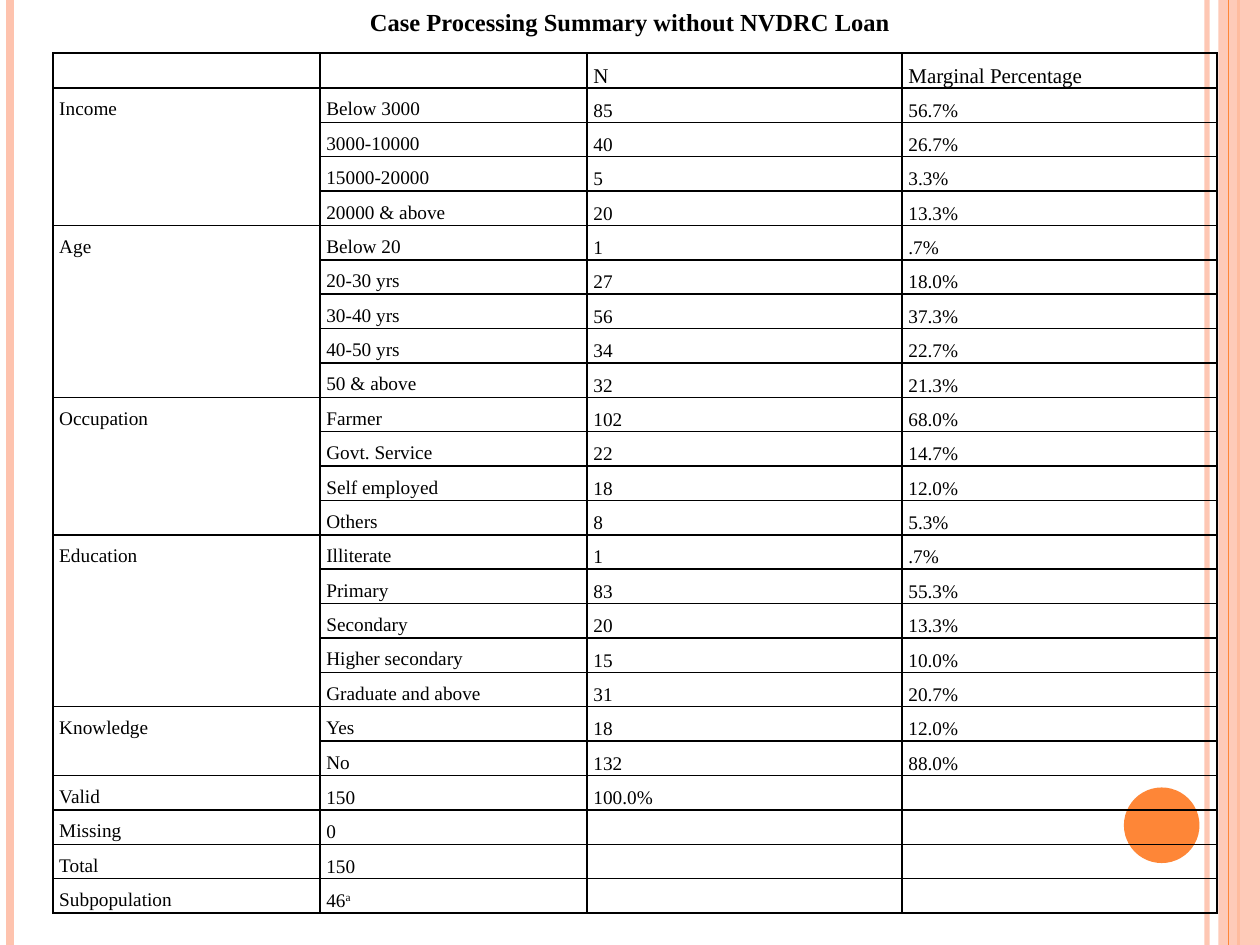
from lxml.etree import SubElement
from pptx import Presentation
from pptx.dml.color import RGBColor
from pptx.enum.shapes import MSO_CONNECTOR, MSO_SHAPE
from pptx.enum.text import MSO_ANCHOR, PP_ALIGN
from pptx.oxml.ns import qn
from pptx.util import Inches, Pt

COLORS = {"peach": "FEC3AE", "orange": "FE8637", "black": "000000"}
FONT = "Times New Roman"


def add_alpha(shape, percent):
    for color in shape._element.spPr.iter(qn("a:srgbClr")):
        SubElement(color, qn("a:alpha"), val=str(percent * 1000))


def add_span(para, text, size, bold=False):
    span = para.add_run()
    span.text = text
    span.font.name = FONT
    span.font.size = Pt(size)
    span.font.bold = bold
    span.font.color.rgb = RGBColor.from_string(COLORS["black"])
    return span


deck = Presentation()
deck.slide_width = Inches(10)
deck.slide_height = Inches(7.5)
page = deck.slides.add_slide(deck.slide_layouts[5])

stripes = [
    (9.58, "peach", 3, 93),
    (0.08, "peach", 4.5, 100),
    (9.83, "orange", 1.5, 100),
    (9.75, "orange", 0.75, 100),
]
for x, color, width, opacity in stripes:
    stripe = page.shapes.add_connector(
        MSO_CONNECTOR.STRAIGHT, Inches(x), Inches(0), Inches(x), Inches(7.5))
    stripe.line.color.rgb = RGBColor.from_string(COLORS[color])
    stripe.line.width = Pt(width)
    SubElement(stripe._element.spPr, qn("a:effectLst"))
    if opacity < 100:
        add_alpha(stripe, opacity)
    if x == 9.83:
        band = page.shapes.add_shape(
            MSO_SHAPE.RECTANGLE, Inches(9.67), Inches(0), Inches(0.33), Inches(7.5))

disc = page.shapes.add_shape(
    MSO_SHAPE.OVAL, Inches(8.92), Inches(6.25), Inches(0.6), Inches(0.6))
for shape, color in ((band, "peach"), (disc, "orange")):
    shape.shadow.inherit = False
    shape.fill.solid()
    shape.fill.fore_color.rgb = RGBColor.from_string(COLORS[color])
    shape.line.fill.background()
add_alpha(band, 87)

groups = [
    ("Income", [("Below 3000", "85", "56.7%"), ("3000-10000", "40", "26.7%"),
                ("15000-20000", "5", "3.3%"), ("20000 & above", "20", "13.3%")]),
    ("Age", [("Below 20", "1", ".7%"), ("20-30 yrs", "27", "18.0%"),
             ("30-40 yrs", "56", "37.3%"), ("40-50 yrs", "34", "22.7%"),
             ("50 & above", "32", "21.3%")]),
    ("Occupation", [("Farmer", "102", "68.0%"), ("Govt. Service", "22", "14.7%"),
                    ("Self employed", "18", "12.0%"), ("Others", "8", "5.3%")]),
    ("Education", [("Illiterate", "1", ".7%"), ("Primary", "83", "55.3%"),
                   ("Secondary", "20", "13.3%"), ("Higher secondary", "15", "10.0%"),
                   ("Graduate and above", "31", "20.7%")]),
    ("Knowledge", [("Yes", "18", "12.0%"), ("No", "132", "88.0%")]),
]
totals = [("Valid", "150", "100.0%", ""), ("Missing", "0", "", ""),
          ("Total", "150", "", ""), ("Subpopulation", "46", "", "")]

rows = [("", "", "N", "Marginal Percentage")]
merges = []
for name, entries in groups:
    merges.append((len(rows), len(rows) + len(entries) - 1))
    for index, entry in enumerate(entries):
        rows.append((name if index == 0 else "", *entry))
first_total = len(rows)
rows += totals

widths = [2.12, 2.12, 2.5, 2.5]
frame = page.shapes.add_table(
    len(rows), len(widths), Inches(0.42), Inches(0.42),
    Inches(sum(widths)), Inches(6.83))
table = frame.table
table.first_row = False
table.horz_banding = False
for column, width in zip(table.columns, widths):
    column.width = Inches(width)

for r, values in enumerate(rows):
    table.rows[r].height = Inches(6.83) // len(rows)
    for c, value in enumerate(values):
        cell = table.cell(r, c)
        cell.margin_left = cell.margin_right = Inches(0.05)
        cell.margin_top = cell.margin_bottom = 0
        middle = r > 0 and c >= (1 if r >= first_total else 2)
        cell.vertical_anchor = MSO_ANCHOR.MIDDLE if middle else MSO_ANCHOR.TOP
        for side in ("L", "R", "T", "B"):
            border = SubElement(cell._tc.tcPr, qn(f"a:ln{side}"), w=str(Pt(1)))
            fill = SubElement(border, qn("a:solidFill"))
            SubElement(fill, qn("a:srgbClr"), val=COLORS["black"])
        cell.fill.background()
        para = cell.text_frame.paragraphs[0]
        if value:
            para.alignment = PP_ALIGN.JUSTIFY
            para.line_spacing = 1.5
            add_span(para, value, 12 if r == 0 else 11)
            if value == "46":
                note = add_span(para, "a", 11)
                note.font._element.set("baseline", "30000")
        else:
            SubElement(para._p, qn("a:endParaRPr"), sz="1100")

for top, bottom in merges:
    table.cell(top, 0).merge(table.cell(bottom, 0))

title = page.shapes.title
title.left, title.top = Inches(0.5), Inches(0)
title.width, title.height = Inches(9), Inches(0.34)
title.text_frame.word_wrap = True
title.text_frame.vertical_anchor = MSO_ANCHOR.MIDDLE
para = title.text_frame.paragraphs[0]
para.alignment = PP_ALIGN.CENTER
add_span(para, "Case Processing Summary without NVDRC Loan", 14, bold=True)

deck.save("out.pptx")
